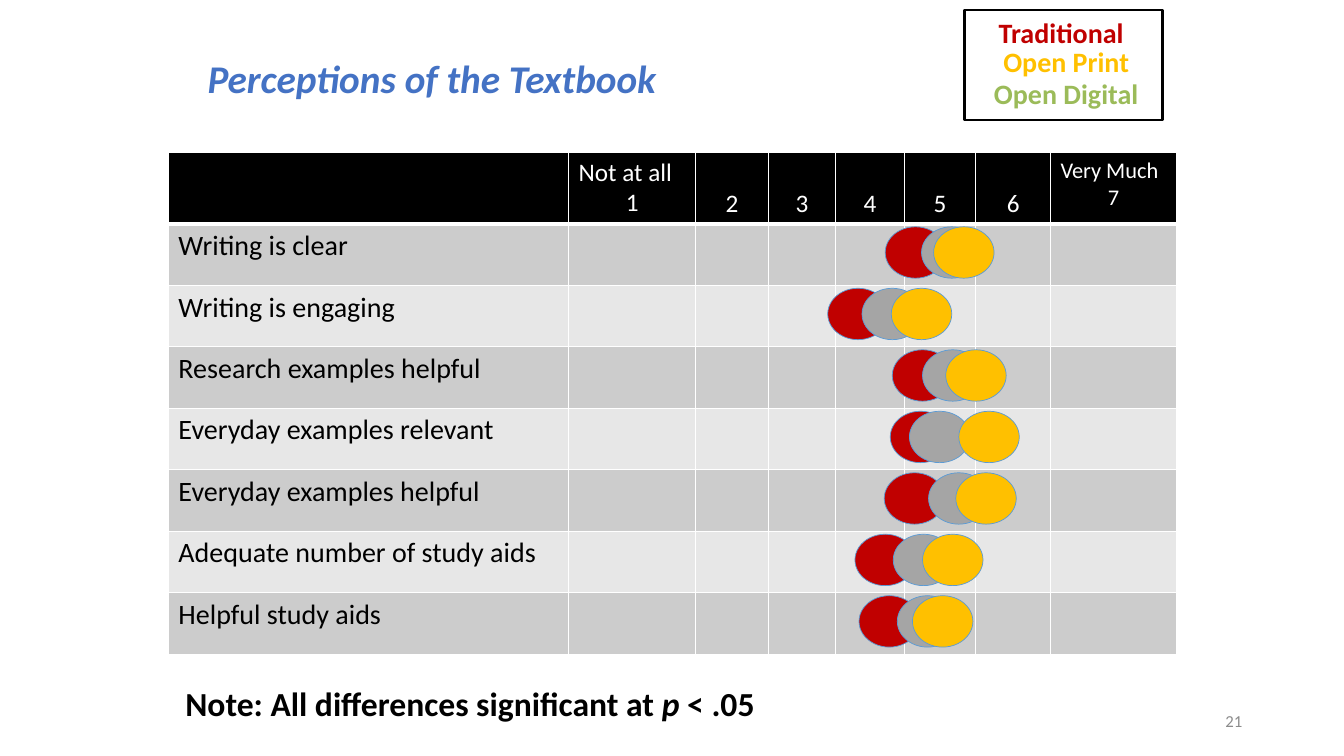
import pptx
import pptx.util
import pptx.dml.color
import pptx.enum.shapes
import pptx.enum.text
import pptx.oxml
import pptx.oxml.ns

RGB = pptx.dml.color.RGBColor
ALIGN = pptx.enum.text.PP_ALIGN
ANCHOR = pptx.enum.text.MSO_ANCHOR
SHAPE = pptx.enum.shapes.MSO_SHAPE

BLACK = RGB(0x00, 0x00, 0x00)
WHITE = RGB(0xFF, 0xFF, 0xFF)
RED = RGB(0xC0, 0x00, 0x00)
GRAY = RGB(0xA5, 0xA5, 0xA5)
GOLD = RGB(0xFF, 0xC0, 0x00)
GREEN = RGB(0x9B, 0xBB, 0x59)
BLUE = RGB(0x44, 0x72, 0xC4)
EDGE = RGB(0x5B, 0x9B, 0xD5)
DARK = RGB(0xCC, 0xCC, 0xCC)
LIGHT = RGB(0xE7, 0xE7, 0xE7)
MUTED = RGB(0x8C, 0x8C, 0x8C)

SCALE = 9144  # EMU per px, 100 px to the inch
COLS = [397, 126, 72, 67, 68, 71, 74, 125]
HEAD, ROW = 71, 61
DOT_TOP, DOT_W, DOT_H = 225, 60, 51

# Question, then the left edges of its red, gray and gold dots
ITEMS = [
    ("Writing is clear", (878, 914, 926)),
    ("Writing is engaging", (821, 855, 884)),
    ("Research examples helpful", (885, 915, 938)),
    ("Everyday examples relevant", (883, 902, 951)),
    ("Everyday examples helpful", (877, 921, 948)),
    ("Adequate number of study aids", (848, 886, 915)),
    ("Helpful study aids", (852, 890, 905)),
]


def px(*nums):
    return [pptx.util.Emu(num * SCALE) for num in nums]


def write(para, text, size=18, color=BLACK, bold=False, italic=False, align=None):
    """Add one run to a paragraph."""
    run = para.add_run()
    run.text = text
    font = run.font
    font.name = "Calibri"
    font.size = pptx.util.Pt(size)
    font.bold = bold
    font.italic = italic
    font.color.rgb = color
    if align is not None:
        para.alignment = align


def add_box(shapes, left, top, width, height, wrap=True, grow=True):
    """Add a text box and return its first paragraph."""
    frame = shapes.add_textbox(*px(left, top, width, height)).text_frame
    frame.word_wrap = wrap
    if grow:
        frame.auto_size = pptx.enum.text.MSO_AUTO_SIZE.SHAPE_TO_FIT_TEXT
    else:
        frame.vertical_anchor = ANCHOR.MIDDLE
    return frame.paragraphs[0]


def add_form(shapes, kind, at, line, width, fill=None):
    form = shapes.add_shape(kind, *px(*at))
    form.shadow.inherit = False
    if fill is None:
        form.fill.background()
    else:
        form.fill.solid()
        form.fill.fore_color.rgb = fill
    form.line.color.rgb = line
    form.line.width = pptx.util.Pt(width)


def paint(cell, fill, top=1, bottom=1):
    """Give a cell white borders and a plain fill."""
    props = cell._tc.get_or_add_tcPr()
    for side, width in zip("LRTB", (1, 1, top, bottom)):
        props.append(pptx.oxml.parse_xml(
            f'<a:ln{side} {pptx.oxml.ns.nsdecls("a")} w="{width * 12700}">'
            f'<a:solidFill><a:srgbClr val="{WHITE}"/></a:solidFill></a:ln{side}>'))
    cell.fill.solid()
    cell.fill.fore_color.rgb = fill


def add_grid(shapes):
    rows = len(ITEMS) + 1
    at = px(167, 151, sum(COLS), HEAD + ROW * len(ITEMS))
    grid = shapes.add_table(rows, len(COLS), *at).table
    for col, width in zip(grid.columns, px(*COLS)):
        col.width = width
    for num, row in enumerate(grid.rows):
        row.height = px(ROW if num else HEAD)[0]
        for cell in row.cells:
            if num == 0:
                paint(cell, BLACK, bottom=3)
            else:
                paint(cell, DARK if num % 2 else LIGHT, top=3 if num == 1 else 1)

    # Scale from 1 to 7, with words at both ends
    ends = {1: ("Not at all", 18), 7: ("Very Much", 16)}
    for mark in range(1, 8):
        cell = grid.cell(0, mark)
        para = cell.text_frame.paragraphs[0]
        size = 18
        if mark in ends:
            label, size = ends[mark]
            write(para, label, size=size, color=WHITE)
            para = cell.text_frame.add_paragraph()
        else:
            cell.vertical_anchor = ANCHOR.BOTTOM
        write(para, str(mark), size=size, color=WHITE, align=ALIGN.CENTER)

    # Questions
    for num, (label, _) in enumerate(ITEMS, 1):
        write(grid.cell(num, 0).text_frame.paragraphs[0], label, size=20)


def add_dots(shapes):
    for num, (_, lefts) in enumerate(ITEMS):
        for left, fill in zip(lefts, (RED, GRAY, GOLD)):
            at = (left, DOT_TOP + ROW * num, DOT_W, DOT_H)
            add_form(shapes, SHAPE.FLOWCHART_CONNECTOR, at, EDGE, 0.5, fill)


def add_key(shapes):
    group = shapes.add_group_shape().shapes
    add_form(group, SHAPE.RECTANGLE, (957, 10, 196, 109), BLACK, 2)
    for label, color, left, top, width in (
            ("Traditional", RED, 979, 10, 147),
            ("Open Print", GOLD, 962, 39, 191),
            ("Open Digital", GREEN, 962, 71, 191)):
        para = add_box(group, left, top, width, 44)
        write(para, label, size=20, color=color, bold=True, align=ALIGN.CENTER)


def main():
    deck = pptx.Presentation()
    deck.slide_width, deck.slide_height = px(1333, 750)
    shapes = deck.slides.add_slide(deck.slide_layouts[6]).shapes

    # Ratings
    add_grid(shapes)
    add_dots(shapes)

    # Note
    note = add_box(shapes, 174, 673, 591, 50, wrap=False)
    write(note, "Note: All differences significant at ", size=24, bold=True)
    write(note, "p ", size=24, bold=True, italic=True)
    write(note, "< .05", size=24, bold=True)

    # Key, title and slide number
    add_key(shapes)
    title = add_box(shapes, 196, 49, 615, 57)
    write(title, "Perceptions of the Textbook", size=28, color=BLUE,
          bold=True, italic=True)
    page = add_box(shapes, 942, 695, 300, 40, grow=False)
    write(page, "21", size=12, color=MUTED, align=ALIGN.RIGHT)

    deck.save("out.pptx")


if __name__ == "__main__":
    main()
